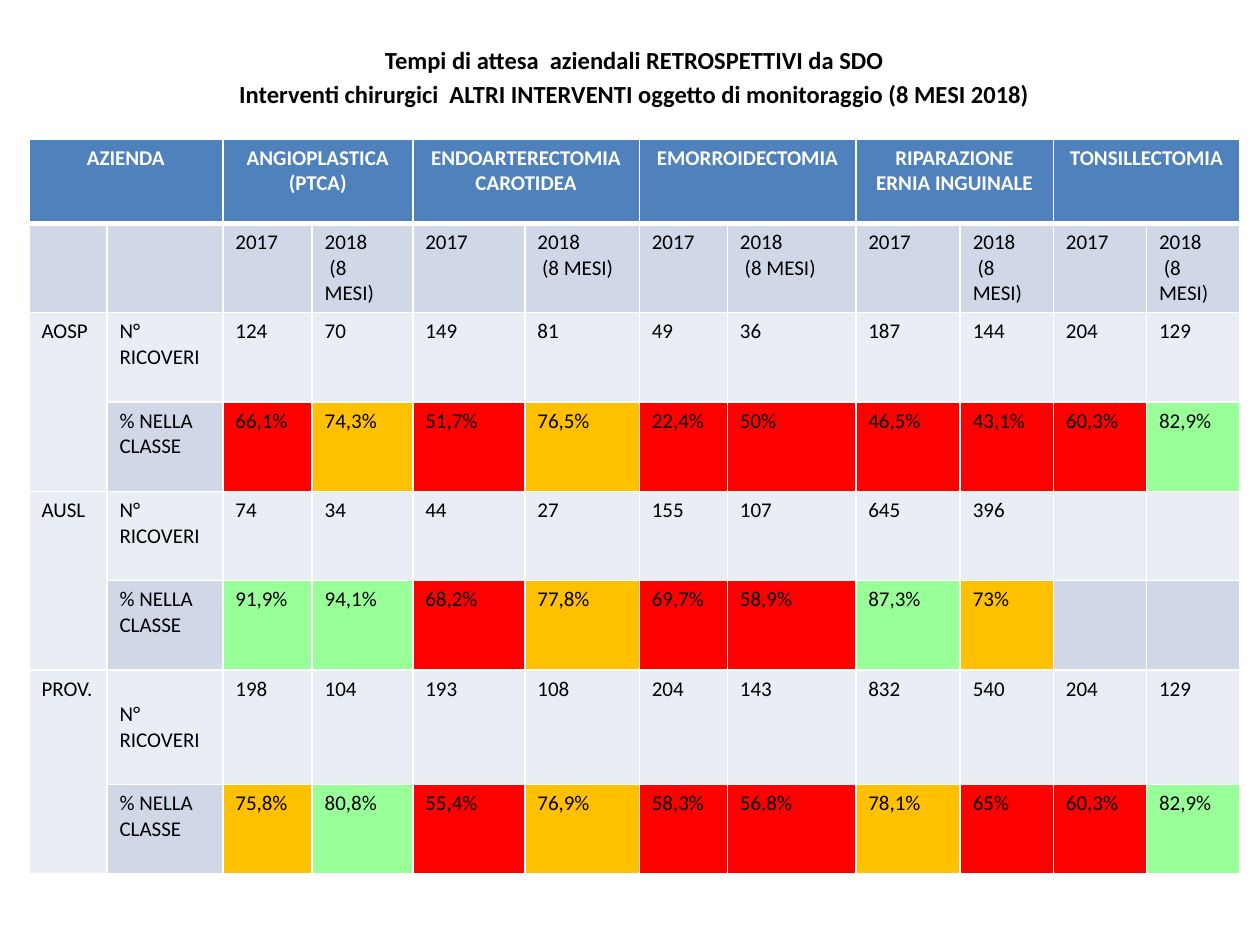
from dataclasses import dataclass

from lxml.etree import SubElement as Sub
from pptx import Presentation
from pptx.dml.color import RGBColor as RGB
from pptx.enum.text import MSO_ANCHOR as Anchor, MSO_AUTO_SIZE as Fit, PP_ALIGN as Align
from pptx.oxml.ns import qn
from pptx.util import Inches, Pt


@dataclass(frozen=True)
class Theme:
    font: str = "Calibri"
    title: int = 14
    body: int = 12
    ink: str = "000000"
    white: str = "FFFFFF"
    head: str = "4F81BD"
    dark: str = "D0D8E8"
    light: str = "E9EDF4"
    red: str = "FF0000"
    amber: str = "FFC000"
    green: str = "99FF99"


T = Theme()
WIDE, HIGH = 10, 7.5

# Column and row sizes, as weights within the table's box
COLS = [0.62, 0.92, 0.71, 0.8, 0.89, 0.91, 0.7, 1.02, 0.83, 0.74, 0.74, 0.74]
ROWS = [0.67, 0.71, 0.71, 0.71, 0.71, 0.71, 0.91, 0.71]

TITLE = ["Tempi di attesa  aziendali RETROSPETTIVI da SDO",
         "Interventi chirurgici  ALTRI INTERVENTI oggetto di monitoraggio (8 MESI 2018)"]
HEADS = ["AZIENDA", "ANGIOPLASTICA (PTCA)", "ENDOARTERECTOMIA CAROTIDEA",
         "EMORROIDECTOMIA", "RIPARAZIONE ERNIA INGUINALE", "TONSILLECTOMIA"]
YEARS = ["2017", "2018\n (8 MESI)"]
UNITS = {
    "AOSP": (["124", "70", "149", "81", "49", "36", "187", "144", "204", "129"],
             ["66,1%", "74,3%", "51,7%", "76,5%", "22,4%", "50%", "46,5%", "43,1%",
              "60,3%", "82,9%"]),
    "AUSL": (["74", "34", "44", "27", "155", "107", "645", "396", "", ""],
             ["91,9%", "94,1%", "68,2%", "77,8%", "69,7%", "58,9%", "87,3%", "73%",
              "", ""]),
    "PROV.": (["198", "104", "193", "108", "204", "143", "832", "540", "204", "129"],
              ["75,8%", "80,8%", "55,4%", "76,9%", "58,3%", "56,8%", "78,1%", "65%",
               "60,3%", "82,9%"]),
}


def format_par(par, size, color, bold=False, align=Align.LEFT):
    font = par.font
    font.name, font.size, font.bold = T.font, Pt(size), bold
    font.color.rgb = RGB.from_string(color)
    par.alignment = align


def rate(text):
    """Traffic-light fill for a share of cases within the class."""
    if not text:
        return T.dark
    share = float(text.rstrip("%").replace(",", "."))
    return T.green if share >= 80 else T.amber if share >= 70 else T.red


def edge(cell, **widths):
    props = cell._tc.get_or_add_tcPr()
    for spot, side in enumerate("LRTB"):
        line = Sub(props, qn(f"a:ln{side}"), w=str(Pt(widths.get(side, 1))))
        Sub(Sub(line, qn("a:solidFill")), qn("a:srgbClr"), val=T.white)
        props.insert(spot, line)


def fill_cell(cell, text, fill, head=False, **widths):
    cell.text = text
    for par in cell.text_frame.paragraphs:
        if head:
            format_par(par, T.body, T.white, True, Align.CENTER)
        else:
            format_par(par, T.body, T.ink)
    cell.fill.solid()
    cell.fill.fore_color.rgb = RGB.from_string(fill)
    edge(cell, **widths)


def add_title(slide, box):
    title = slide.shapes.title
    title.left, title.top, title.width, title.height = box
    frame = title.text_frame
    frame.auto_size, frame.word_wrap = Fit.NONE, True
    frame.vertical_anchor = Anchor.TOP
    frame.text = "\n".join(TITLE)
    for par in frame.paragraphs:
        format_par(par, T.title, T.ink, True, Align.CENTER)
        par.space_before = Pt(0.2 * T.title)


def add_waits(slide, box):
    left, top, width, height = box
    table = slide.shapes.add_table(len(ROWS), len(COLS), *box).table
    for col, part in zip(table.columns, COLS):
        col.width = int(width * part / sum(COLS))
    for row, part in zip(table.rows, ROWS):
        row.height = int(height * part / sum(ROWS))

    # Heading over each pair of columns, then the years
    for num in range(len(COLS)):
        text = "" if num % 2 else HEADS[num // 2]
        fill_cell(table.cell(0, num), text, T.head, head=True, B=3)
        text = YEARS[num % 2] if num > 1 else ""
        fill_cell(table.cell(1, num), text, T.dark, T=3)
    for num in range(0, len(COLS), 2):
        table.cell(0, num).merge(table.cell(0, num + 1))

    # Two rows for each unit: admissions and share within the class
    for unit, (name, (counts, shares)) in enumerate(UNITS.items()):
        row = 2 + 2 * unit
        fill_cell(table.cell(row, 0), name, T.light)
        fill_cell(table.cell(row + 1, 0), "", T.light)
        table.cell(row, 0).merge(table.cell(row + 1, 0))
        fill_cell(table.cell(row, 1), "N° RICOVERI", T.light)
        fill_cell(table.cell(row + 1, 1), "% NELLA CLASSE", T.dark)
        for num, (count, share) in enumerate(zip(counts, shares), 2):
            fill_cell(table.cell(row, num), count, T.light)
            fill_cell(table.cell(row + 1, num), share, rate(share))

    # The last admissions label sits one line lower
    table.cell(6, 1).margin_top = Inches(0.25)


def main():
    deck = Presentation()
    deck.slide_width, deck.slide_height = Inches(WIDE), Inches(HIGH)
    slide = deck.slides.add_slide(deck.slide_layouts[5])

    def area(x, y, w, h):
        return (int(x * deck.slide_width), int(y * deck.slide_height),
                int(w * deck.slide_width), int(h * deck.slide_height))

    add_title(slide, area(0.031, 0.041, 0.945, 0.959))
    add_waits(slide, area(0.023, 0.147, 0.961, 0.778))
    deck.save("out.pptx")


if __name__ == "__main__":
    main()
